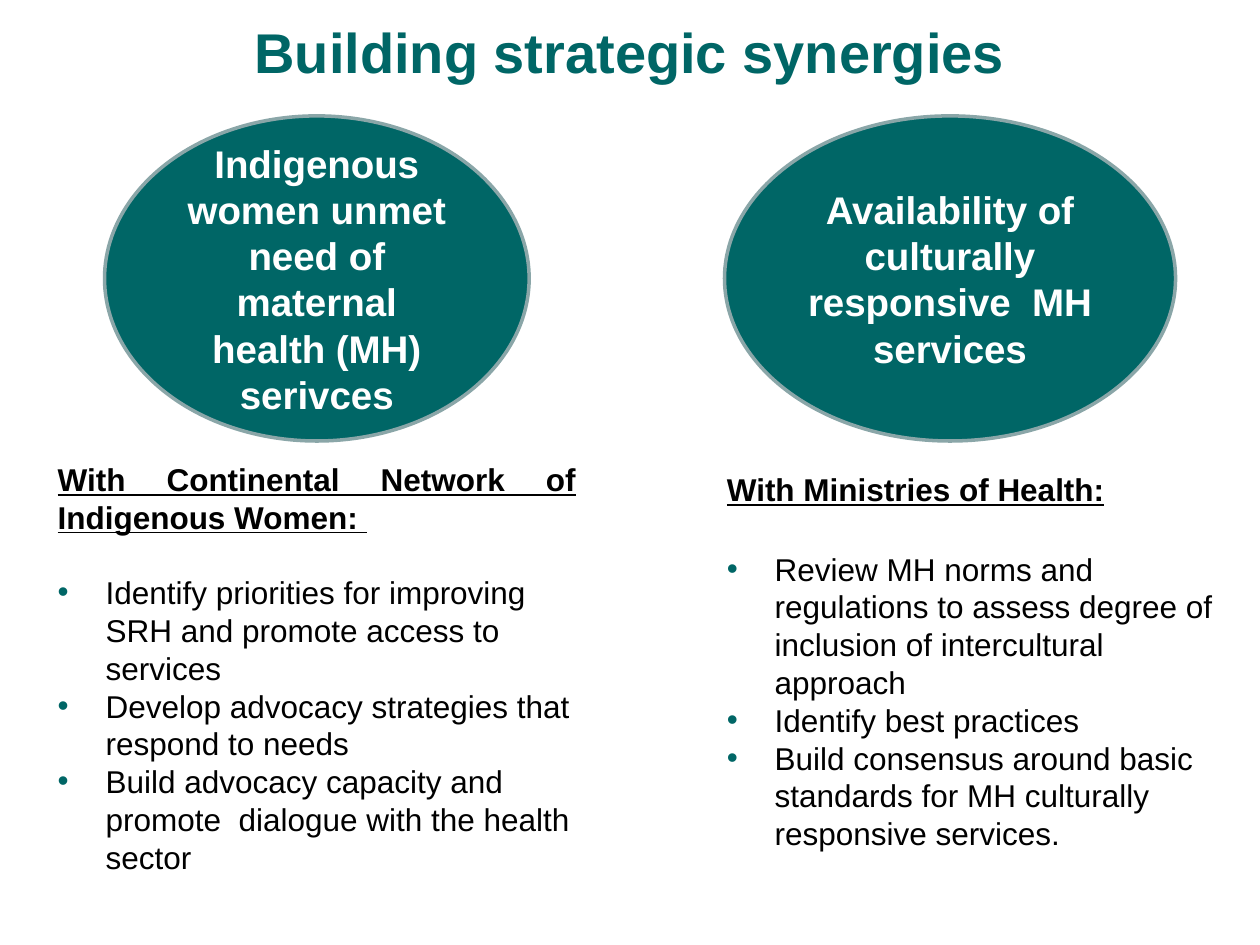
import pptx
import pptx.util
import pptx.dml.color
import pptx.enum.shapes
import pptx.enum.text
import pptx.oxml
import pptx.oxml.ns
from pptx.util import Inches

ALIGN = pptx.enum.text.PP_ALIGN
ANCHOR = pptx.enum.text.MSO_ANCHOR


def colour(value):
    return pptx.dml.color.RGBColor.from_string(value)


class SlideBuilder:
    font_name = "Arial"
    accent = "006666"
    outline = "8AA6A8"
    light = "FFFFFF"
    dark = "000000"

    def __init__(self, slide):
        self.slide = slide

    def format_paragraph(self, paragraph, text, size, ink, bold=False, align=ALIGN.LEFT):
        paragraph.text = text
        paragraph.alignment = align
        font = paragraph.font
        font.name = self.font_name
        font.size = pptx.util.Pt(size)
        font.bold = bold
        font.color.rgb = colour(ink)

    def text_frame(self, left, top, width, height):
        box = self.slide.shapes.add_textbox(
            Inches(left), Inches(top), Inches(width), Inches(height))
        box.text_frame.word_wrap = True
        return box.text_frame

    def title(self, text):
        frame = self.text_frame(0.5, -0.08, 9, 0.97)
        frame.vertical_anchor = ANCHOR.MIDDLE
        self.format_paragraph(frame.paragraphs[0], text, 32, self.accent, True, ALIGN.CENTER)

    def ellipse(self, left, width, text):
        shape = self.slide.shapes.add_shape(
            pptx.enum.shapes.MSO_SHAPE.OVAL,
            Inches(left), Inches(0.92), Inches(width), Inches(2.58))
        shape.shadow.inherit = False
        shape.fill.solid()
        shape.fill.fore_color.rgb = colour(self.accent)
        shape.line.color.rgb = colour(self.outline)
        shape.line.width = pptx.util.Pt(2)
        frame = shape.text_frame
        frame.word_wrap = True
        frame.vertical_anchor = ANCHOR.MIDDLE
        self.format_paragraph(frame.paragraphs[0], text, 22, self.light, True, ALIGN.CENTER)

    def add_bullet(self, paragraph):
        properties = paragraph._p.get_or_add_pPr()
        properties.set("marL", str(Inches(0.38)))
        properties.set("indent", str(Inches(-0.38)))
        namespace = pptx.oxml.ns.nsdecls("a")
        for xml in (
            f'<a:buClr {namespace}><a:srgbClr val="{self.accent}"/></a:buClr>',
            f'<a:buFont {namespace} typeface="{self.font_name}"/>',
            f'<a:buChar {namespace} char="•"/>',
        ):
            properties.append(pptx.oxml.parse_xml(xml))

    def action_list(self, left, top, width, height, heading, gap, actions):
        frame = self.text_frame(left, top, width, height)
        frame.auto_size = pptx.enum.text.MSO_AUTO_SIZE.SHAPE_TO_FIT_TEXT
        paragraph = frame.paragraphs[0]
        self.format_paragraph(paragraph, heading, 18, self.dark, True, ALIGN.JUSTIFY)
        paragraph.font.underline = True
        paragraph.space_after = pptx.util.Pt(gap)
        for action in actions:
            paragraph = frame.add_paragraph()
            self.add_bullet(paragraph)
            self.format_paragraph(paragraph, action, 18, self.dark)


def main():
    presentation = pptx.Presentation()
    presentation.slide_width = Inches(10)
    presentation.slide_height = Inches(7.5)
    builder = SlideBuilder(presentation.slides.add_slide(presentation.slide_layouts[6]))

    builder.title("Building strategic synergies")
    builder.ellipse(0.83, 3.37, "Indigenous women unmet need of maternal health (MH) serivces")
    builder.action_list(
        0.36, 3.6, 4.31, 3.43, "With Continental Network of Indigenous Women: ", 21.6,
        ["Identify priorities for improving SRH and promote access to services",
         "Develop advocacy strategies that respond to needs",
         "Build advocacy capacity and promote  dialogue with the health sector"])
    builder.action_list(
        5.67, 3.68, 4.08, 3.16, "With Ministries of Health:", 24,
        ["Review MH norms and regulations to assess degree of inclusion of intercultural approach",
         "Identify best practices",
         "Build consensus around basic standards for MH culturally responsive services."])
    builder.ellipse(5.75, 3.58, "Availability of culturally responsive  MH services")

    presentation.save("out.pptx")


if __name__ == "__main__":
    main()
